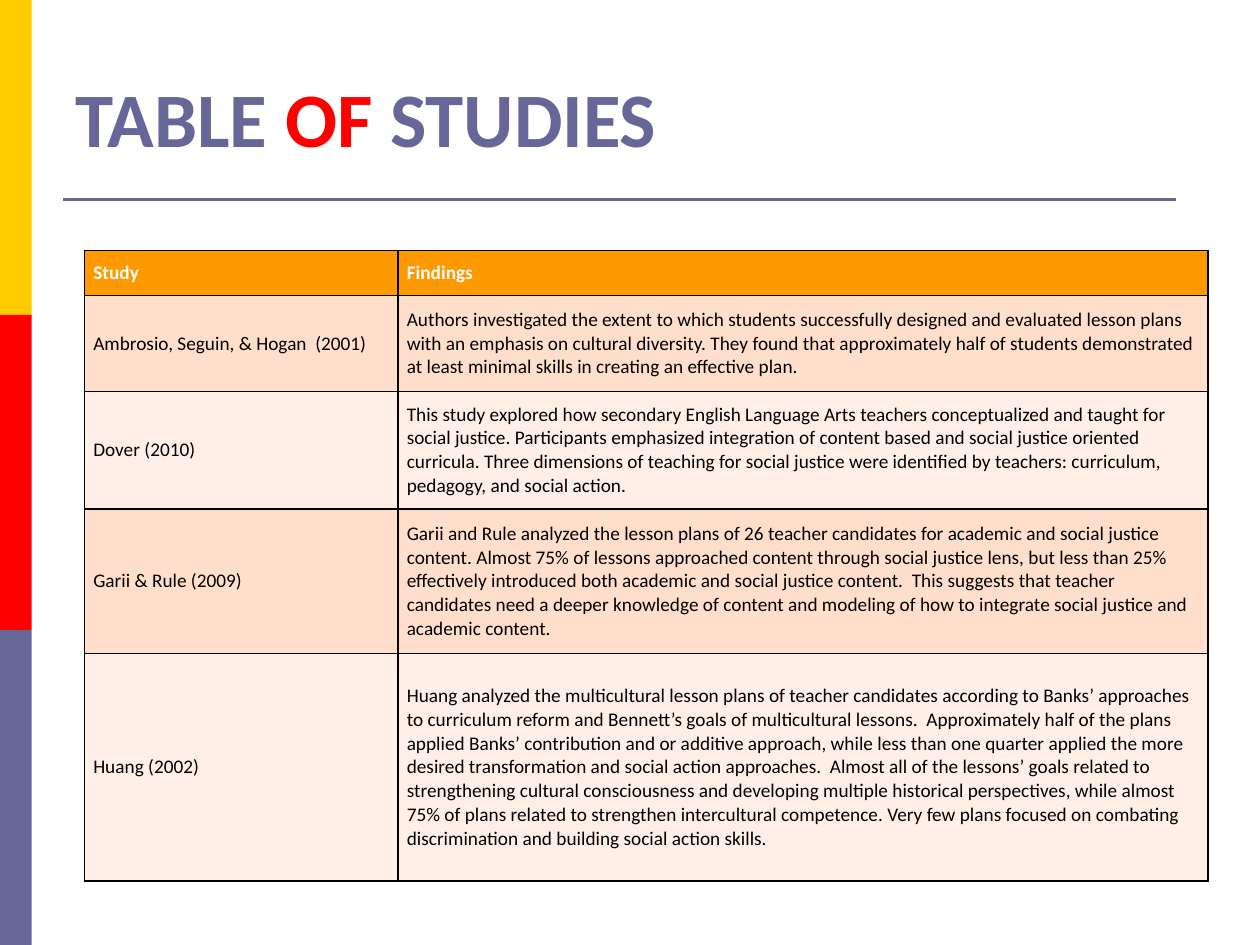
from lxml.etree import SubElement
from pptx import Presentation
from pptx.dml.color import RGBColor
from pptx.enum.shapes import MSO_CONNECTOR, MSO_SHAPE
from pptx.enum.text import MSO_ANCHOR, PP_ALIGN
from pptx.oxml.ns import qn
from pptx.util import Cm, Pt

COLORS = {
    "yellow": "FFCC00", "red": "FF0000", "slate": "666699",
    "orange": "FF9900", "peach": "FFDECC", "cream": "FFEFE7",
    "white": "FFFFFF", "black": "000000",
}
FONT = "Calibri"
TITLE = [("TABLE ", "slate"), ("OF", "red"), (" STUDIES", "slate")]
BANDS = ["yellow", "red", "slate"]
STUDIES = [
    ("Study", "Findings"),
    ("Ambrosio, Seguin, & Hogan  (2001)",
     "Authors investigated the extent to which students successfully designed and evaluated "
     "lesson plans with an emphasis on cultural diversity. They found that approximately half "
     "of students demonstrated at least minimal skills in creating an effective plan."),
    ("Dover (2010)",
     "This study explored how secondary English Language Arts teachers conceptualized and "
     "taught for social justice. Participants emphasized integration of content based and "
     "social justice oriented curricula. Three dimensions of teaching for social justice were "
     "identified by teachers: curriculum, pedagogy, and social action."),
    ("Garii & Rule (2009)",
     "Garii and Rule analyzed the lesson plans of 26 teacher candidates for academic and "
     "social justice content. Almost 75% of lessons approached content through social justice "
     "lens, but less than 25% effectively introduced both academic and social justice content.  "
     "This suggests that teacher candidates need a deeper knowledge of content and modeling of "
     "how to integrate social justice and academic content."),
    ("Huang (2002)",
     "Huang analyzed the multicultural lesson plans of teacher candidates according to Banks’ "
     "approaches to curriculum reform and Bennett’s goals of multicultural lessons.  "
     "Approximately half of the plans applied Banks’ contribution and or additive approach, "
     "while less than one quarter applied the more desired transformation and social action "
     "approaches.  Almost all of the lessons’ goals related to strengthening cultural "
     "consciousness and developing multiple historical perspectives, while almost 75% of plans "
     "related to strengthen intercultural competence. Very few plans focused on combating "
     "discrimination and building social action skills."),
]
COL_WIDTHS = [6.32, 16.33]
ROW_HEIGHTS = [0.91, 1.93, 2.37, 2.91, 4.59]


def rgb(name):
    return RGBColor.from_string(COLORS[name])


def style_run(r, size, color, bold):
    r.font.name = FONT
    r.font.size = Pt(size)
    r.font.bold = bold
    r.font.color.rgb = rgb(color)


def add_borders(cell):
    tcPr = cell._tc.get_or_add_tcPr()
    for side in ("a:lnL", "a:lnR", "a:lnT", "a:lnB"):
        ln = SubElement(tcPr, qn(side), w=str(Pt(1)))
        fill = SubElement(ln, qn("a:solidFill"))
        SubElement(fill, qn("a:srgbClr"), val=COLORS["black"])


def add_bands(s):
    for i, color in enumerate(BANDS):
        sp = s.shapes.add_shape(MSO_SHAPE.RECTANGLE, 0, Cm(6.35 * i), Cm(0.64), Cm(6.35))
        sp.shadow.inherit = False
        sp.fill.solid()
        sp.fill.fore_color.rgb = rgb(color)
        sp.line.fill.background()


def add_rule(s):
    line = s.shapes.add_connector(MSO_CONNECTOR.STRAIGHT, Cm(1.27), Cm(4.02), Cm(23.7), Cm(4.02))
    line.line.color.rgb = rgb("slate")
    line.line.width = Pt(1.5)
    SubElement(line._element.spPr, qn("a:effectLst"))


def fill_title(s):
    title = s.shapes.title
    title.left, title.top, title.width, title.height = Cm(1.27), Cm(0.76), Cm(22.86), Cm(3.18)
    tf = title.text_frame
    tf.vertical_anchor = MSO_ANCHOR.MIDDLE
    p = tf.paragraphs[0]
    p.alignment = PP_ALIGN.LEFT
    for text, color in TITLE:
        r = p.add_run()
        r.text = text
        style_run(r, 44, color, True)


def add_studies(s):
    table = s.shapes.add_table(len(STUDIES), len(COL_WIDTHS), Cm(1.7), Cm(5.05),
                               Cm(sum(COL_WIDTHS)), Cm(sum(ROW_HEIGHTS))).table
    for col, width in zip(table.columns, COL_WIDTHS):
        col.width = Cm(width)
    for i, (row, height) in enumerate(zip(table.rows, ROW_HEIGHTS)):
        row.height = Cm(height)
        header = i == 0
        band = "orange" if header else ("cream", "peach")[i % 2]
        for cell, text in zip(row.cells, STUDIES[i]):
            cell.text_frame.text = text
            cell.vertical_anchor = MSO_ANCHOR.MIDDLE
            cell.margin_left = cell.margin_right = Cm(0.18)
            cell.margin_top = cell.margin_bottom = 0
            style_run(cell.text_frame.paragraphs[0].runs[0], 11,
                      "white" if header else "black", header)
            add_borders(cell)
            cell.fill.solid()
            cell.fill.fore_color.rgb = rgb(band)


def main():
    prs = Presentation()
    prs.slide_width, prs.slide_height = Cm(25.4), Cm(19.05)
    s = prs.slides.add_slide(prs.slide_layouts[5])
    add_bands(s)
    add_rule(s)
    fill_title(s)
    add_studies(s)
    prs.save("out.pptx")


if __name__ == "__main__":
    main()
